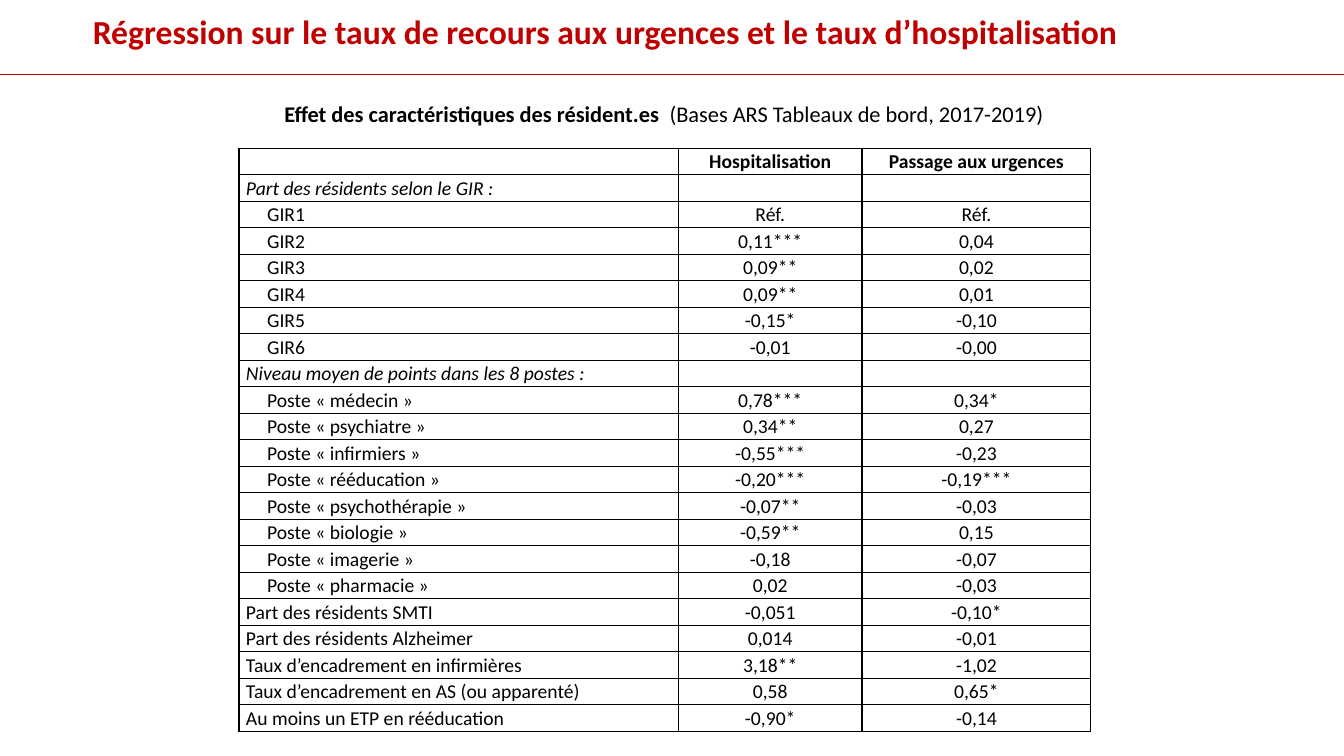
from lxml import etree
from pptx import Presentation
from pptx.dml.color import RGBColor
from pptx.enum.shapes import MSO_SHAPE
from pptx.enum.text import MSO_ANCHOR, PP_ALIGN
from pptx.oxml.ns import qn
from pptx.util import Inches, Pt

RED = RGBColor(0xC0, 0x00, 0x00)
BLACK = RGBColor(0x00, 0x00, 0x00)
FONT = "Calibri"
LEFT, CENTER = PP_ALIGN.LEFT, PP_ALIGN.CENTER
MIDDLE = MSO_ANCHOR.MIDDLE
RECTANGLE = MSO_SHAPE.RECTANGLE

# Content
TITLE = "Régression sur le taux de recours aux urgences et le taux d’hospitalisation"
SUBTITLE = [("Effet des caractéristiques des résident.es  ", True),
            ("(Bases ARS Tableaux de bord, 2017-2019)", False)]
HEADER = ("", "Hospitalisation", "Passage aux urgences")
# Each group: heading (or None), then its rows
GROUPS = [
    ("Part des résidents selon le GIR :", [
        ("GIR1", "Réf.", "Réf."),
        ("GIR2", "0,11***", "0,04"),
        ("GIR3", "0,09**", "0,02"),
        ("GIR4", "0,09**", "0,01"),
        ("GIR5", "-0,15*", "-0,10"),
        ("GIR6", "-0,01", "-0,00"),
    ]),
    ("Niveau moyen de points dans les 8 postes :", [
        ("Poste « médecin »", "0,78***", "0,34*"),
        ("Poste « psychiatre »", "0,34**", "0,27"),
        ("Poste « infirmiers »", "-0,55***", "-0,23"),
        ("Poste « rééducation »", "-0,20***", "-0,19***"),
        ("Poste « psychothérapie »", "-0,07**", "-0,03"),
        ("Poste « biologie »", "-0,59**", "0,15"),
        ("Poste « imagerie »", "-0,18", "-0,07"),
        ("Poste « pharmacie »", "0,02", "-0,03"),
    ]),
    (None, [
        ("Part des résidents SMTI", "-0,051", "-0,10*"),
        ("Part des résidents Alzheimer", "0,014", "-0,01"),
        ("Taux d’encadrement en infirmières", "3,18**", "-1,02"),
        ("Taux d’encadrement en AS (ou apparenté)", "0,58", "0,65*"),
        ("Au moins un ETP en rééducation", "-0,90*", "-0,14"),
    ]),
]
COL_WIDTHS = (4.36, 1.82, 2.27)
TABLE_LEFT, TABLE_TOP, TABLE_HEIGHT = 2.37, 1.47, 5.79
INDENT = 0.21


def style(p, size, color, bold=None, italic=None, align=LEFT, spacing=0.9):
    p.alignment = align
    p.line_spacing = spacing
    f = p.font
    f.name, f.size, f.bold, f.italic = FONT, Pt(size), bold, italic
    f.color.rgb = color


def add_borders(cell):
    tc_pr = cell._tc.get_or_add_tcPr()
    for i, side in enumerate(("a:lnL", "a:lnR", "a:lnT", "a:lnB")):
        ln = etree.Element(qn(side), w=str(Pt(1)))
        fill = etree.SubElement(ln, qn("a:solidFill"))
        etree.SubElement(fill, qn("a:srgbClr"), val=str(BLACK))
        tc_pr.insert(i, ln)


def fill_cell(cell, text, bold, italic, align, indent):
    cell.margin_left = cell.margin_right = Inches(0.07)
    cell.margin_top = cell.margin_bottom = 0
    cell.fill.background()
    add_borders(cell)
    p = cell.text_frame.paragraphs[0]
    style(p, 14, BLACK, bold, italic, align, 1.07)
    if text:
        p.add_run().text = text
    else:  # keeps an empty row as low as the others
        etree.SubElement(p._p, qn("a:endParaRPr"), sz="1400")
    if indent:
        p._p.get_or_add_pPr().set("indent", str(Inches(INDENT)))


prs = Presentation()
prs.slide_width, prs.slide_height = Inches(13.33), Inches(7.5)
s = prs.slides.add_slide(prs.slide_layouts[6])

# Title band, outlined so that its lower edge underlines the title
band = s.shapes.add_shape(RECTANGLE, Inches(-0.18), Inches(-0.08), Inches(13.71), Inches(0.82))
band.shadow.inherit = False
band.fill.background()
band.line.color.rgb = RED
band.line.width = Pt(1.25)
tf = band.text_frame
tf.word_wrap = True
tf.vertical_anchor = MIDDLE
tf.margin_left = Inches(1.1)
p = tf.paragraphs[0]
p.add_run().text = TITLE
style(p, 24, RED, bold=True)

# Subtitle
tf = s.shapes.add_textbox(Inches(0.33), Inches(0.97), Inches(12.51), Inches(0.4)).text_frame
tf.word_wrap = True
p = tf.paragraphs[0]
style(p, 16, BLACK, align=CENTER)
for text, bold in SUBTITLE:
    r = p.add_run()
    r.text = text
    r.font.bold = bold

# Table rows: (texts, bold, italic, indented label)
rows = [(HEADER, True, False, False)]
for heading, items in GROUPS:
    if heading:
        rows.append(((heading, "", ""), False, True, False))
    rows += [(item, False, False, bool(heading)) for item in items]

# Table
table = s.shapes.add_table(len(rows), len(COL_WIDTHS), Inches(TABLE_LEFT), Inches(TABLE_TOP),
                           Inches(sum(COL_WIDTHS)), Inches(TABLE_HEIGHT)).table
table.horz_banding = False
for col, width in zip(table.columns, COL_WIDTHS):
    col.width = Inches(width)
for i, (texts, bold, italic, indented) in enumerate(rows):
    table.rows[i].height = Inches(TABLE_HEIGHT / len(rows))
    for j, text in enumerate(texts):
        fill_cell(table.cell(i, j), text, bold, italic,
                  CENTER if j else LEFT, indented and j == 0)

prs.save("out.pptx")
